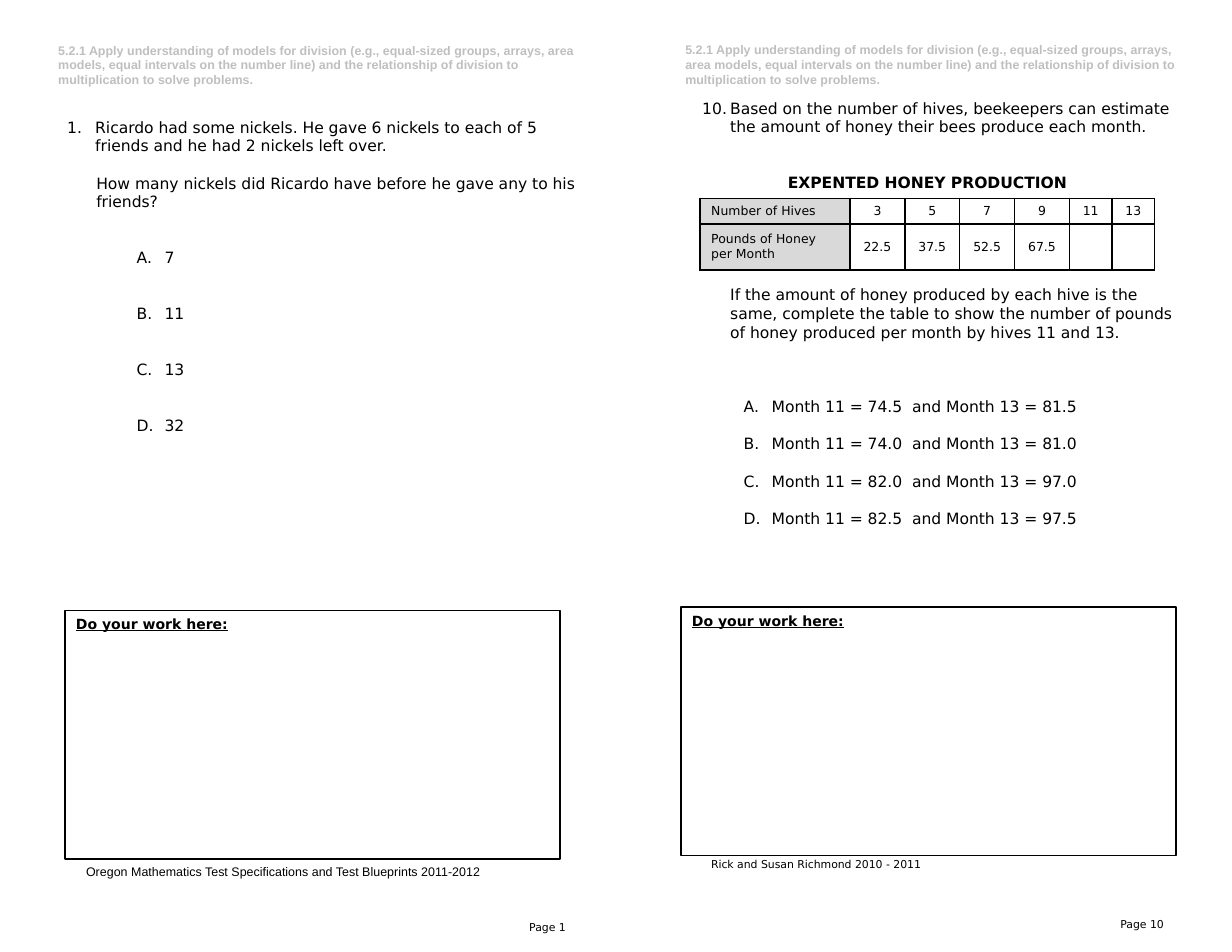
from lxml import etree
from pptx import Presentation
from pptx import util as u
from pptx.dml.color import RGBColor
from pptx.enum import shapes, text
from pptx.oxml.ns import qn

BLACK = RGBColor(0x00, 0x00, 0x00)
WHITE = RGBColor(0xFF, 0xFF, 0xFF)
GREY = RGBColor(0xBF, 0xBF, 0xBF)
SHADE = RGBColor(0xD9, 0xD9, 0xD9)
SANS = "DejaVu Sans"
LEFT, MID, RIGHT = text.PP_ALIGN.LEFT, text.PP_ALIGN.CENTER, text.PP_ALIGN.RIGHT

GOAL = ("5.2.1 Apply understanding of models for division (e.g., equal-sized groups, "
        "arrays, area models, equal intervals on the number line) and the relationship "
        "of division to multiplication to solve problems.")
HIVES = [
    ["Number of Hives", "3", "5", "7", "9", "11", "13"],
    ["Pounds of Honey per Month", "22.5", "37.5", "52.5", "67.5", "", ""],
]
COLS = [1.34, 0.49, 0.49, 0.49, 0.49, 0.38, 0.38]
ROWS = [0.27, 0.23, 0.41]


def place(shape, box):
    shape.left, shape.top, shape.width, shape.height = [u.Inches(n) for n in box]


def add_run(para, words, size, font=SANS, color=BLACK, bold=False, under=False):
    run = para.add_run()
    run.text = words
    run.font.name = font
    run.font.size = u.Pt(size)
    run.font.bold = bold
    run.font.underline = under
    run.font.color.rgb = color


def set_frame(shape):
    frame = shape.text_frame
    frame.word_wrap = True
    frame.auto_size = text.MSO_AUTO_SIZE.NONE
    frame.vertical_anchor = text.MSO_ANCHOR.TOP
    return frame


def add_note(slide, box, words, size, font=SANS, align=LEFT):
    note = slide.shapes.add_textbox(*[u.Inches(n) for n in box])
    para = set_frame(note).paragraphs[0]
    para.alignment = align
    add_run(para, words, size, font)


def add_goal(shape, box):
    place(shape, box)
    para = set_frame(shape).paragraphs[0]
    para.alignment = LEFT
    para.line_spacing = u.Pt(9.6)
    add_run(para, GOAL, 8, "Arial", GREY, bold=True)


def add_item(para, words, gap, margin, hang=0, kind=None, start=1):
    para.alignment = LEFT
    para.line_spacing = u.Pt(12)
    para.space_before = u.Pt(gap)
    props = para._p.get_or_add_pPr()
    props.set("marL", str(u.Inches(margin)))
    props.set("indent", str(u.Inches(-hang)))
    if kind:
        mark = etree.SubElement(props, qn("a:buFont"))
        mark.set("typeface", SANS)
        mark = etree.SubElement(props, qn("a:buAutoNum"))
        mark.set("type", kind)
        mark.set("startAt", str(start))
    else:
        etree.SubElement(props, qn("a:buNone"))
    add_run(para, words, 10)


def add_quiz(shape, box, number, lead, ask, picks, gaps, margins):
    place(shape, box)
    frame = set_frame(shape)
    add_item(frame.paragraphs[0], lead, 0, 0.25, 0.25, "arabicPeriod", number)
    add_item(frame.add_paragraph(), ask, gaps[0], margins[0])
    for i, pick in enumerate(picks):
        gap = gaps[1] if i == 0 else gaps[2]
        add_item(frame.add_paragraph(), pick, gap, margins[1], 0.25, "alphaUcPeriod")


def add_work(slide, box):
    work = slide.shapes.add_shape(shapes.MSO_SHAPE.RECTANGLE, *[u.Inches(n) for n in box])
    work.shadow.inherit = False
    work.fill.background()
    work.line.color.rgb = BLACK
    work.line.width = u.Pt(0.75)
    para = set_frame(work).paragraphs[0]
    para.alignment = LEFT
    add_run(para, "Do your work here:", 9, bold=True, under=True)


def set_edges(cell, shown):
    props = cell._tc.get_or_add_tcPr()
    for i, side in enumerate(("lnL", "lnR", "lnT", "lnB")):
        edge = etree.Element(qn("a:" + side), w=str(u.Pt(1)))
        if side in shown:
            fill = etree.SubElement(edge, qn("a:solidFill"))
            etree.SubElement(fill, qn("a:srgbClr"), val=str(BLACK))
        else:
            etree.SubElement(edge, qn("a:noFill"))
        props.insert(i, edge)


def set_cell(cell, words, shade, align, size=8, bold=False, shown=("lnL", "lnR", "lnT", "lnB")):
    cell.fill.solid()
    cell.fill.fore_color.rgb = shade
    cell.vertical_anchor = text.MSO_ANCHOR.MIDDLE
    para = cell.text_frame.paragraphs[0]
    para.alignment = align
    if words:
        add_run(para, words, size, bold=bold)
    set_edges(cell, shown)


def add_hives(slide, left, top):
    grid = slide.shapes.add_table(len(ROWS), len(COLS), u.Inches(left), u.Inches(top),
                                  u.Inches(sum(COLS)), u.Inches(sum(ROWS))).table
    grid.first_row = grid.horz_banding = False
    for col, width in zip(grid.columns, COLS):
        col.width = u.Inches(width)
    for row, height in zip(grid.rows, ROWS):
        row.height = u.Inches(height)
    grid.cell(0, 0).merge(grid.cell(0, len(COLS) - 1))
    for c in range(len(COLS)):
        title = "EXPENTED HONEY PRODUCTION" if c == 0 else ""
        set_cell(grid.cell(0, c), title, WHITE, MID, 10, True, ("lnB",))
    for r, row in enumerate(HIVES, 1):
        for c, words in enumerate(row):
            head = c == 0
            set_cell(grid.cell(r, c), words, SHADE if head else WHITE, LEFT if head else MID)


def main():
    deck = Presentation()
    deck.slide_width, deck.slide_height = u.Inches(11), u.Inches(8.5)
    slide = deck.slides.add_slide(deck.slide_layouts[3])
    title, first, second = slide.placeholders

    add_goal(title, (0.42, 0.33, 4.92, 0.5))
    add_quiz(first, (0.5, 1, 4.83, 2.96), 1,
             "Ricardo had some nickels. He gave 6 nickels to each of 5 friends "
             "and he had 2 nickels left over.",
             "How many nickels did Ricardo have before he gave any to his friends?",
             ["7", "11", "13", "32"], (12, 24, 24), (0.26, 0.87))
    add_work(slide, (0.58, 5.45, 4.42, 2.22))
    add_note(slide, (0.67, 7.67, 4.33, 0.24),
             "Oregon Mathematics Test Specifications and Test Blueprints 2011-2012", 8, "Arial")
    add_note(slide, (4.33, 8.17, 0.82, 0.3), "Page 1", 7, align=RIGHT)

    box = (6.02, 0.33, 4.58, 0.5)
    add_goal(slide.shapes.add_textbox(*[u.Inches(n) for n in box]), box)
    pairs = [("74.5", "81.5"), ("74.0", "81.0"), ("82.0", "97.0"), ("82.5", "97.5")]
    add_quiz(second, (6.17, 0.83, 4.5, 3.97), 10,
             "Based on the number of hives, beekeepers can estimate the amount of honey "
             "their bees produce each month.",
             "If the amount of honey produced by each hive is the same, complete the table "
             "to show the number of pounds of honey produced per month by hives 11 and 13.",
             [f"Month 11 = {a}  and Month 13 = {b}" for a, b in pairs],
             (96, 36, 12), (0.25, 0.62))
    add_hives(slide, 6.25, 1.5)
    add_work(slide, (6.08, 5.42, 4.42, 2.22))
    add_note(slide, (6.25, 7.61, 4.25, 0.22), "Rick and Susan Richmond 2010 - 2011", 7)
    add_note(slide, (9.67, 8.14, 0.82, 0.3), "Page 10", 7, align=RIGHT)
    deck.save("out.pptx")


if __name__ == "__main__":
    main()
